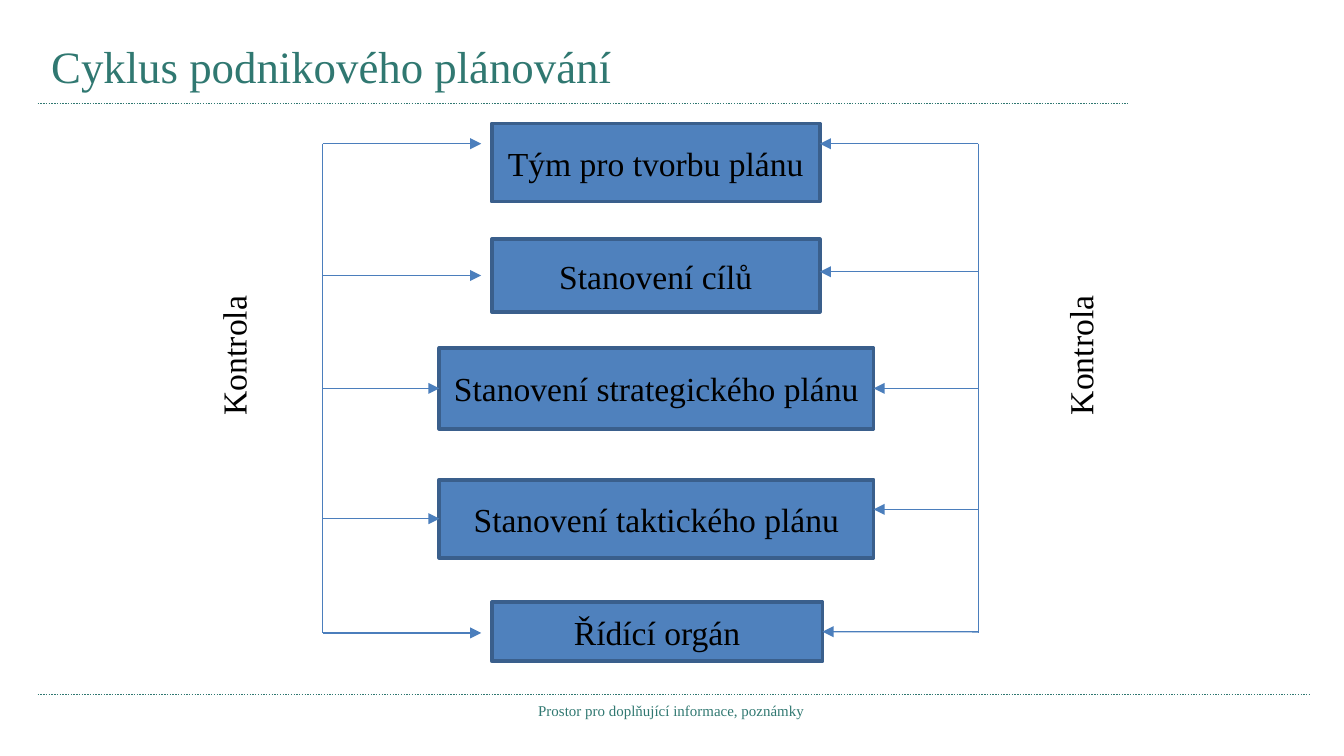
from lxml.etree import SubElement
from pptx import Presentation
from pptx.dml.color import RGBColor
from pptx.enum.dml import MSO_LINE
from pptx.enum.shapes import MSO_CONNECTOR, MSO_SHAPE
from pptx.enum.text import MSO_ANCHOR, PP_ALIGN
from pptx.oxml.ns import qn
from pptx.util import Pt

GREEN = RGBColor(0x30, 0x78, 0x71)
BLUE = RGBColor(0x4F, 0x81, 0xBD)
BORDER = RGBColor(0x3A, 0x5F, 0x8C)
ARROW = RGBColor(0x4B, 0x7E, 0xBC)
BLACK = RGBColor(0, 0, 0)

LEFT_RAIL, RIGHT_RAIL = 172.8, 524.2
RAIL_TOP, RAIL_BOTTOM = 77, 339.1
LEFT_SIDE, RIGHT_SIDE = 1, 3


class PlanningSlide:
    """Holds the slide and its style, and draws each kind of element."""

    font_format = {"name": "Times New Roman", "size": Pt(18)}
    frame_format = {"word_wrap": True, "vertical_anchor": MSO_ANCHOR.MIDDLE}

    def __init__(self, deck):
        self.slide = deck.slides.add_slide(deck.slide_layouts[5])

    def set_text(self, shape, text, color=BLACK, size=18, alignment=PP_ALIGN.CENTER):
        frame = shape.text_frame
        for name, value in self.frame_format.items():
            setattr(frame, name, value)
        para = frame.paragraphs[0]
        para.alignment = alignment
        span = para.add_run()
        span.text = text
        for name, value in {**self.font_format, "size": Pt(size)}.items():
            setattr(span.font, name, value)
        span.font.color.rgb = color

    def title(self, text, left, top, width, height):
        title = self.slide.shapes.title
        place = {"left": left, "top": top, "width": width, "height": height}
        for name, value in place.items():
            setattr(title, name, Pt(value))
        self.set_text(title, text, GREEN, 24, PP_ALIGN.LEFT)

    def label(self, text, left, top, width, height, vertical=False, **style):
        label = self.slide.shapes.add_textbox(Pt(left), Pt(top), Pt(width), Pt(height))
        self.set_text(label, text, **style)
        if vertical:
            label.element.txBody.bodyPr.set("vert", "vert270")

    def box(self, text, left, top, width, height):
        box = self.slide.shapes.add_shape(
            MSO_SHAPE.RECTANGLE, Pt(left), Pt(top), Pt(width), Pt(height))
        box.shadow.inherit = False
        box.fill.solid()
        box.fill.fore_color.rgb = BLUE
        box.line.color.rgb = BORDER
        box.line.width = Pt(2)
        self.set_text(box, text)
        return box

    def line(self, start, end, color=ARROW, dash=None):
        line = self.slide.shapes.add_connector(
            MSO_CONNECTOR.STRAIGHT, *(Pt(value) for value in (*start, *end)))
        line.line.color.rgb = color
        line.line.width = Pt(0.75)
        if dash:
            line.line.dash_style = dash
        SubElement(line.element.spPr, qn("a:effectLst"))
        return line

    def arrow(self, start, end, target=None, side=None):
        arrow = self.line(start, end)
        outline = arrow.element.spPr.find(qn("a:ln"))
        SubElement(outline, qn("a:tailEnd"), type="triangle")
        if target is not None:
            arrow.end_connect(target, side)


def main():
    deck = Presentation()
    deck.slide_width, deck.slide_height = Pt(720), Pt(405)
    page = PlanningSlide(deck)

    for y, right in ((55.4, 604), (372.2, 702)):
        page.line((20.2, y), (right, y), GREEN, MSO_LINE.ROUND_DOT)
    page.label("Prostor pro doplňující informace, poznámky",
               212.4, 372.2, 294.5, 16.6, color=GREEN, size=8)
    page.title("Cyklus podnikového plánování", 20.2, 15.1, 475.9, 40.3)

    page.box("Tým pro tvorbu plánu", 263.5, 66.2, 175.7, 41.8)
    page.box("Stanovení cílů", 263.5, 128.2, 175.7, 38.9)
    strategic = page.box("Stanovení strategického plánu", 235.4, 186.5, 232.6, 43.2)
    tactical = page.box("Stanovení taktického plánu", 235.4, 257, 232.6, 41.8)
    governing = page.box("Řídící orgán", 263.5, 322.6, 177.1, 31.7)

    page.label("Kontrola", 108, 128.2, 33.8, 124.6, vertical=True)
    page.label("Kontrola", 558.7, 148.3, 39.6, 84.2, vertical=True)

    for rail in (LEFT_RAIL, RIGHT_RAIL):
        page.line((rail, RAIL_TOP), (rail, RAIL_BOTTOM))

    for y in (RAIL_TOP, 147.6, RAIL_BOTTOM):
        page.arrow((LEFT_RAIL, y), (257.8, y))
    for y, target in ((208.1, strategic), (277.9, tactical)):
        page.arrow((LEFT_RAIL, y), (235.4, y), target, LEFT_SIDE)

    for y, end in ((RAIL_TOP, 439.2), (145.6, 439.2), (272.9, 468)):
        page.arrow((RIGHT_RAIL, y), (end, y))
    for y, end, target in ((208.1, 468, strategic), (338.5, 440.6, governing)):
        page.arrow((RIGHT_RAIL, y), (end, y), target, RIGHT_SIDE)

    deck.save("out.pptx")


if __name__ == "__main__":
    main()
